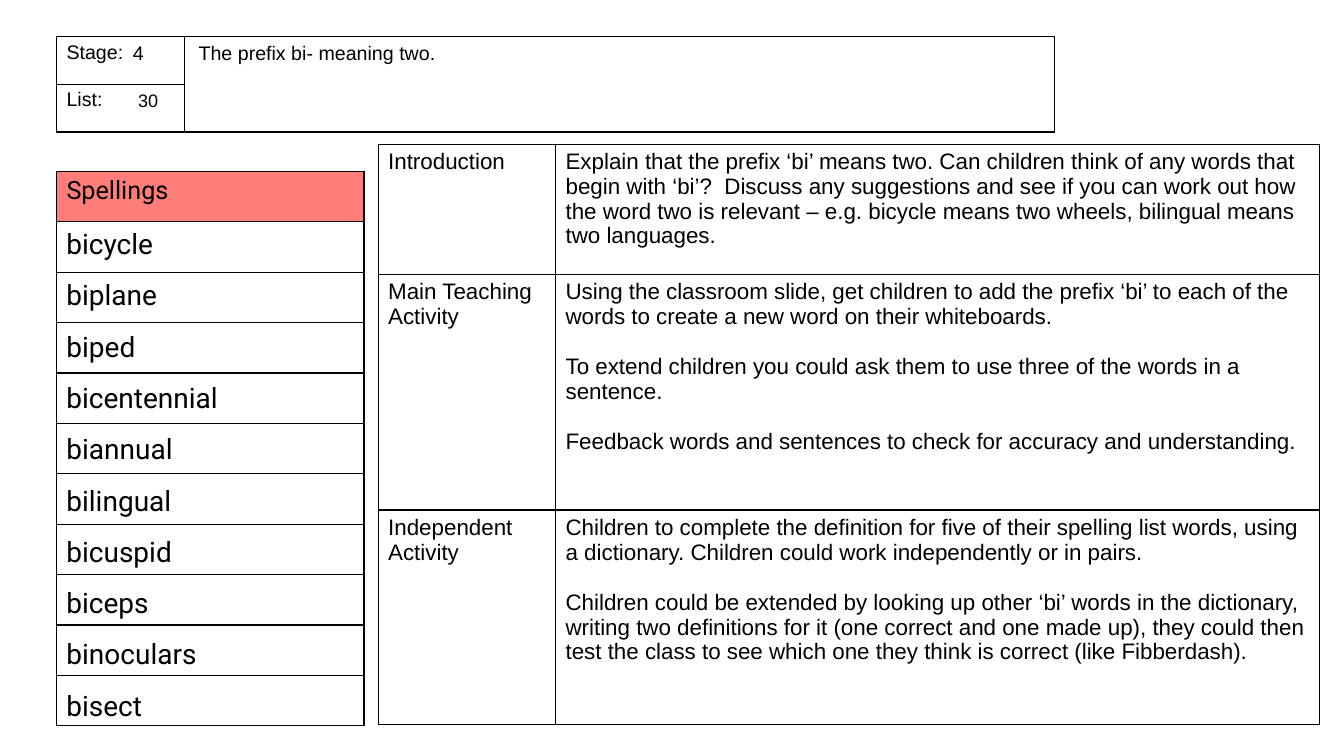
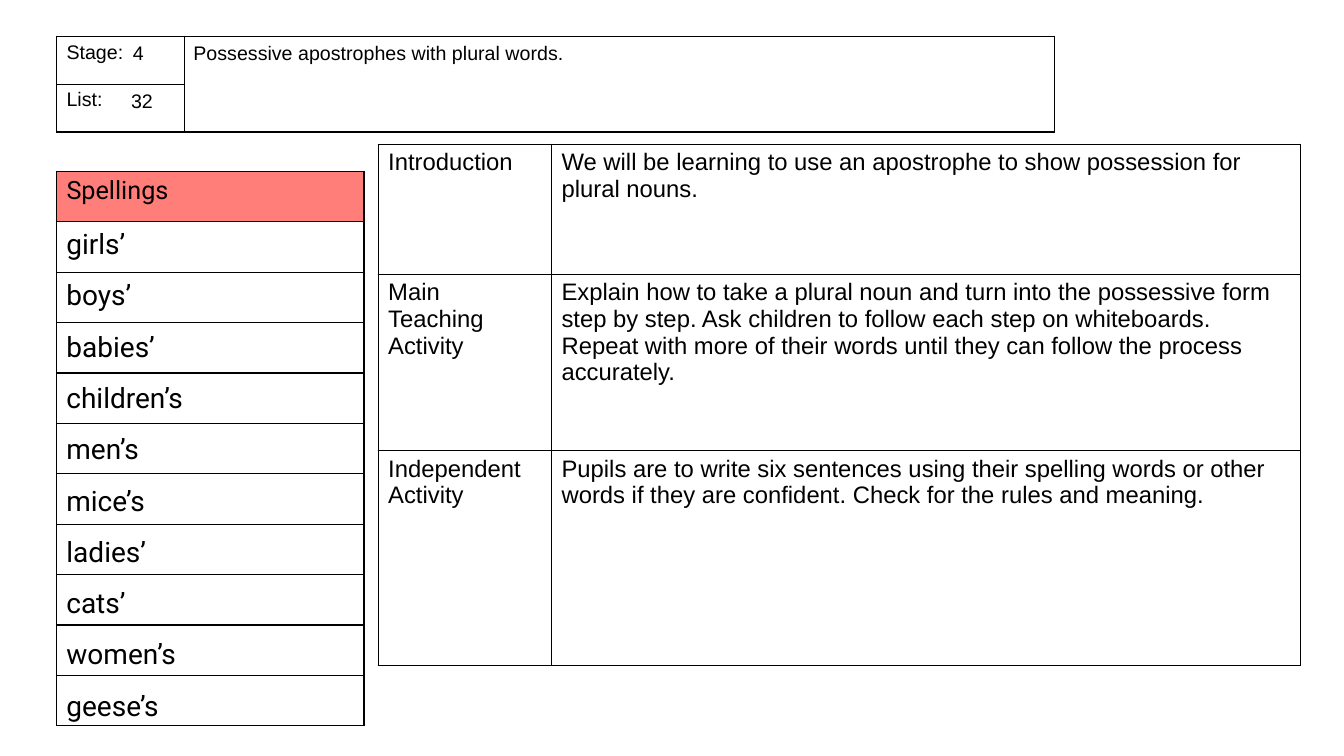
from dataclasses import dataclass

from lxml import etree
from pptx import Presentation
from pptx import util as u
from pptx.dml.color import RGBColor
from pptx.enum import shapes
from pptx.oxml import ns


@dataclass(frozen=True)
class Theme:
    ink: str = "000000"
    paper: str = "FFFFFF"
    accent: str = "FF7E79"
    font: str = "Arial"
    word_font: str = "Roboto"
    label_size: float = 14
    heading_size: float = 18
    word_size: float = 20
    border: float = 1


THEME = Theme()

LESSONS = [
    dict(
        stage="4",
        number="30",
        number_format=dict(left=1.22, width=0.47, inset=0.15, size=12.9),
        topic="The prefix bi- meaning two.",
        topic_inset=0.15,
        words=["bicycle", "biplane", "biped", "bicentennial", "biannual",
               "bilingual", "bicuspid", "biceps", "binoculars", "bisect"],
        plan_size=16,
        plan_cols=[1.76, 7.58],
        plan_rows=[1.29, 2.34, 2.13],
        plan=[
            ["Explain that the prefix ‘bi’ means two. Can children think of any "
             "words that begin with ‘bi’?  Discuss any suggestions and see if you "
             "can work out how the word two is relevant – e.g. bicycle means two "
             "wheels, bilingual means two languages."],
            ["Using the classroom slide, get children to add the prefix ‘bi’ to "
             "each of the words to create a new word on their whiteboards.",
             "To extend children you could ask them to use three of the words in "
             "a sentence.",
             "Feedback words and sentences to check for accuracy and "
             "understanding."],
            ["Children to complete the definition for five of their spelling list "
             "words, using a dictionary. Children could work independently or in "
             "pairs.",
             "Children could be extended by looking up other ‘bi’ words in the "
             "dictionary, writing two definitions for it (one correct and one made "
             "up), they could then test the class to see which one they think is "
             "correct (like Fibberdash)."],
        ],
    ),
    dict(
        stage="4",
        number="32",
        number_format=dict(left=1.1, width=0.72, inset=0.2),
        topic="Possessive apostrophes with plural words.",
        topic_inset=0.1,
        words=["girls’", "boys’", "babies’", "children’s", "men’s",
               "mice’s", "ladies’", "cats’", "women’s", "geese’s"],
        plan_size=17,
        plan_cols=[1.72, 7.43],
        plan_rows=[1.29, 1.75, 2.13],
        plan=[
            ["We will be learning to use an apostrophe to show possession for "
             "plural nouns."],
            ["Explain how to take a plural noun and turn into the possessive form "
             "step by step. Ask children to follow each step on whiteboards. "
             "Repeat with more of their words until they can follow the process "
             "accurately."],
            ["Pupils are to write six sentences using their spelling words or "
             "other words if they are confident. Check for the rules and meaning."],
        ],
    ),
]

ACTIVITIES = ["Introduction", "Main Teaching Activity", "Independent Activity"]


def write(tf, paragraphs, size=THEME.label_size, font=THEME.font,
          color=THEME.ink, gap=0, after=0, spacing=None):
    for i, line in enumerate(paragraphs):
        p = tf.add_paragraph() if i else tf.paragraphs[0]
        p.space_before = u.Pt(gap if i else 0)
        p.space_after = u.Pt(after)
        if spacing:
            p.line_spacing = spacing
        r = p.add_run()
        r.text = line
        r.font.size = u.Pt(size)
        r.font.name = font
        r.font.color.rgb = RGBColor.from_string(color)


class Deck:
    def __init__(self, theme):
        self.theme = theme
        self.prs = Presentation()
        self.prs.slide_width = u.Inches(13.33)
        self.prs.slide_height = u.Inches(7.5)
        self.s = None

    def slide(self):
        self.s = self.prs.slides.add_slide(self.prs.slide_layouts[6])
        self.panel(0.17, 0.15, 13, 7.22)

    def panel(self, *box):
        sp = self.s.shapes.add_shape(shapes.MSO_SHAPE.RECTANGLE,
                                     *map(u.Inches, box))
        sp.shadow.inherit = False
        paper = RGBColor.from_string(self.theme.paper)
        sp.fill.solid()
        sp.fill.fore_color.rgb = paper
        sp.line.color.rgb = paper
        sp.line.width = u.Pt(self.theme.border)
        color = sp._element.spPr.find(ns.qn("a:solidFill"))[0]
        etree.SubElement(color, ns.qn("a:alpha"), val="90000")

    def text(self, paragraphs, left, top, width, height, inset=0.1, **fmt):
        sp = self.s.shapes.add_textbox(*map(u.Inches, (left, top, width, height)))
        tf = sp.text_frame
        tf.word_wrap = True
        tf.margin_left = u.Inches(inset)
        tf.margin_right = 0
        write(tf, paragraphs, **fmt)

    def outline(self, cell):
        tc_pr = cell._tc.get_or_add_tcPr()
        for side in "LRTB":
            ln = etree.SubElement(tc_pr, ns.qn(f"a:ln{side}"),
                                  w=str(u.Pt(self.theme.border)))
            fill = etree.SubElement(ln, ns.qn("a:solidFill"))
            etree.SubElement(fill, ns.qn("a:srgbClr"), val=self.theme.ink)

    def table(self, left, top, cols, rows):
        frame = self.s.shapes.add_table(
            len(rows), len(cols), *map(u.Inches, (left, top, sum(cols), sum(rows))))
        table = frame.table
        table.first_row = table.horz_banding = False
        for col, width in zip(table.columns, cols):
            col.width = u.Inches(width)
        for row, height in zip(table.rows, rows):
            row.height = u.Inches(height)
        for cell in table.iter_cells():
            self.outline(cell)
            cell.fill.background()
        return table

    def header(self, stage, number, number_format, topic, topic_inset):
        table = self.table(0.56, 0.36, [1.27, 8.63], [0.95 / 2] * 2)
        table.cell(0, 1).merge(table.cell(1, 1))
        for i, label in enumerate(["Stage:", "List:"]):
            write(table.cell(i, 0).text_frame, [label])
        self.text([stage], 1.22, 0.38, 0.47, 0.4, spacing=0.9)
        self.text([number], top=0.86, height=0.4, spacing=0.9, **number_format)
        self.text([topic], 1.82, 0.36, 8.64, 0.95, inset=topic_inset)

    def spellings(self, words):
        table = self.table(0.56, 1.7, [3.05], [0.5] * (len(words) + 1))
        heading = table.cell(0, 0)
        heading.fill.solid()
        heading.fill.fore_color.rgb = RGBColor.from_string(self.theme.accent)
        write(heading.text_frame, ["Spellings"], size=self.theme.heading_size,
              font=self.theme.word_font)
        self.text(words, 0.56, 2.2, 3.05, 5, size=self.theme.word_size,
                  font=self.theme.word_font, gap=10.6, after=2)

    def plan(self, paragraphs, cols, rows, size):
        table = self.table(3.75, 1.43, cols, rows)
        for i, (activity, content) in enumerate(zip(ACTIVITIES, paragraphs)):
            write(table.cell(i, 0).text_frame, [activity], size=size)
            write(table.cell(i, 1).text_frame, content, size=size, gap=18)


def main():
    deck = Deck(THEME)
    for lesson in LESSONS:
        deck.slide()
        deck.header(lesson["stage"], lesson["number"], lesson["number_format"],
                    lesson["topic"], lesson["topic_inset"])
        deck.spellings(lesson["words"])
        deck.plan(lesson["plan"], lesson["plan_cols"], lesson["plan_rows"],
                  lesson["plan_size"])
    deck.prs.save("out.pptx")


if __name__ == "__main__":
    main()
